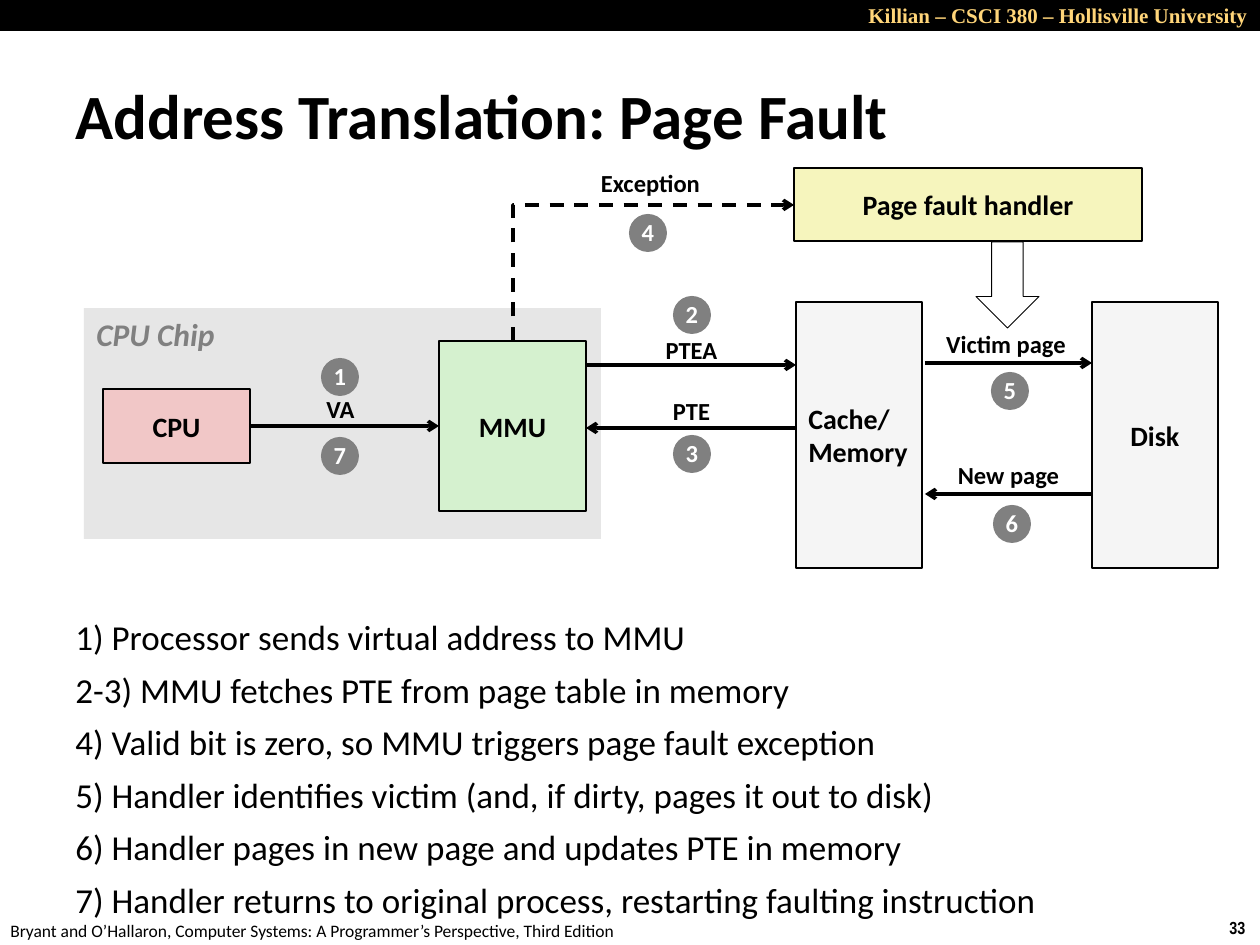
from dataclasses import dataclass

from lxml.etree import SubElement
from pptx import Presentation
from pptx.dml.color import RGBColor
from pptx.enum.dml import MSO_LINE
from pptx.enum.shapes import MSO_CONNECTOR, MSO_SHAPE
from pptx.enum.text import MSO_ANCHOR, PP_ALIGN
from pptx.oxml.ns import qn
from pptx.util import Pt

PX = 914400 / 126


@dataclass(frozen=True)
class Theme:
    font: str = "Calibri"
    black: str = "000000"
    white: str = "FFFFFF"
    gold: str = "FFD579"
    grey: str = "808080"
    chip: str = "E6E6E6"
    store: str = "F5F5F5"
    cpu: str = "F1C7C7"
    mmu: str = "D5F1CF"
    handler: str = "F6F5BD"
    title: int = 36
    body: int = 20
    chip_name: int = 18
    box: int = 16
    label: int = 14
    header: int = 12
    footer: int = 10


T = Theme()
LEFT, CENTER, RIGHT = PP_ALIGN.LEFT, PP_ALIGN.CENTER, PP_ALIGN.RIGHT

prs = Presentation()
prs.slide_width, prs.slide_height = round(1260 * PX), round(945 * PX)
s = prs.slides.add_slide(prs.slide_layouts[6])


def add_block(box, kind=None, lines=(), fill=None, line=0, size=T.box, color=T.black,
              align=CENTER, anchor=MSO_ANCHOR.MIDDLE, wrap=False, para=None, **font):
    """Add a preset shape, or a text box when no kind is given."""
    at = [round(v * PX) for v in box]
    if kind is None:
        sp = s.shapes.add_textbox(*at)
    else:
        sp = s.shapes.add_shape(kind, *at)
        sp.shadow.inherit = False
        if fill:
            sp.fill.solid()
            sp.fill.fore_color.rgb = RGBColor.from_string(fill)
        else:
            sp.fill.background()
        if line:
            sp.line.width = Pt(line)
            sp.line.color.rgb = RGBColor.from_string(T.black)
        else:
            sp.line.fill.background()
    tf = sp.text_frame
    tf.word_wrap, tf.vertical_anchor = wrap, anchor
    for i, text in enumerate(lines):
        p = tf.paragraphs[0] if i == 0 else tf.add_paragraph()
        for name, value in {"alignment": align, **(para or {})}.items():
            setattr(p, name, value)
        r = p.add_run()
        r.text = text
        for name, value in {"name": T.font, "size": Pt(size), "bold": True, **font}.items():
            setattr(r.font, name, value)
        r.font.color.rgb = RGBColor.from_string(color)


def add_arrow(x1, y1, x2, y2, kind=MSO_CONNECTOR.STRAIGHT, dash=None):
    c = s.shapes.add_connector(kind, *[round(v * PX) for v in (x1, y1, x2, y2)])
    c.line.width = Pt(2)
    c.line.color.rgb = RGBColor.from_string(T.black)
    if dash:
        c.line.dash_style = dash
    spPr = c._element.spPr
    SubElement(spPr.find(qn("a:ln")), qn("a:tailEnd"), type="arrow")
    SubElement(spPr, qn("a:effectLst"))
    return c


# Header band and footer
TOP = MSO_ANCHOR.TOP
add_block((1217, 911, 43, 34), lines=["33"], size=T.footer, align=LEFT, anchor=TOP,
          name="Arial Narrow")
add_block((-2, 914, 640, 34), size=T.footer, align=LEFT, anchor=TOP, bold=False,
          lines=["Bryant and O’Hallaron, Computer Systems: A Programmer’s Perspective, Third Edition"])
add_block((0, 0, 1260, 31), MSO_SHAPE.RECTANGLE, fill=T.black)
add_block((843, -4, 417, 38), lines=["Killian – CSCI 380 – Hollisville University"],
          size=T.header, color=T.gold, align=RIGHT, anchor=TOP, wrap=True,
          name="Times New Roman")

# Title and steps
add_block((63, 60, 1201, 108), lines=["Address Translation: Page Fault"], size=T.title,
          align=LEFT, wrap=True)
steps = [
    "1) Processor sends virtual address to MMU",
    "2-3) MMU fetches PTE from page table in memory",
    "4) Valid bit is zero, so MMU triggers page fault exception",
    "5) Handler identifies victim (and, if dirty, pages it out to disk)",
    "6) Handler pages in new page and updates PTE in memory",
    "7) Handler returns to original process, restarting faulting instruction",
]
add_block((63, 620, 1103, 284), lines=steps, size=T.body, align=LEFT, anchor=TOP,
          wrap=True, bold=False, para={"line_spacing": 0.73, "space_before": Pt(12.5)})

# Chip background and component boxes
add_block((84, 308, 517, 231), MSO_SHAPE.RECTANGLE, fill=T.chip)
add_block((84, 309, 146, 50), lines=["CPU Chip"], size=T.chip_name, color=T.grey,
          align=LEFT, anchor=TOP, italic=True)
for box, lines, fill, line, align in [
    ((439, 341, 147, 170), ["MMU"], T.mmu, 1, CENTER),
    ((796, 302, 126, 266), ["Cache/", "Memory"], T.store, 1.5, LEFT),
    ((103, 389, 147, 74), ["CPU"], T.cpu, 1, CENTER),
    ((1092, 302, 126, 266), ["Disk"], T.store, 1.5, CENTER),
    ((794, 168, 348, 73), ["Page fault handler"], T.handler, 1, CENTER),
]:
    add_block(box, MSO_SHAPE.RECTANGLE, lines, fill, line, align=align)
add_block((976, 242, 63, 86), MSO_SHAPE.DOWN_ARROW, line=0.5)

# Straight arrows
for x1, x2, y in [(250, 439, 426), (586, 796, 365), (796, 586, 428),
                  (925, 1092, 363), (1092, 925, 494)]:
    add_arrow(x1, y, x2, y)

# Dashed exception path: up from the MMU, then right to the handler
x1, y1, x2, y2 = 513, 341, 794, 205
cx, cy, half_w, half_h = (x1 + x2) / 2, (y1 + y2) / 2, (y1 - y2) / 2, (x2 - x1) / 2
c = add_arrow(cx + half_w, cy + half_h, cx - half_w, cy - half_h,
              MSO_CONNECTOR.ELBOW, MSO_LINE.DASH)
c._element.spPr.find(qn("a:prstGeom")).set("prst", "bentConnector2")
c._element.spPr.find(qn("a:xfrm")).set("rot", str(90 * 60000))

# Arrow labels
for text, x, y, w in [("VA", 314, 389, 53), ("PTEA", 653, 330, 77), ("PTE", 660, 391, 63),
                      ("Victim page", 933, 324, 146), ("New page", 945, 455, 127),
                      ("Exception", 588, 163, 125)]:
    add_block((x, y, w, 42), lines=[text], size=T.label, para={"line_spacing": 0.98})

# Step numbers
DISC = 38
for number, (x, y) in enumerate([(321, 358), (673, 296), (673, 435), (629, 214),
                                 (991, 372), (993, 505), (321, 437)], 1):
    add_block((x, y, DISC, DISC), MSO_SHAPE.OVAL, [str(number)], T.grey,
              size=T.label, color=T.white, para={"line_spacing": 0.98})

prs.save("out.pptx")
